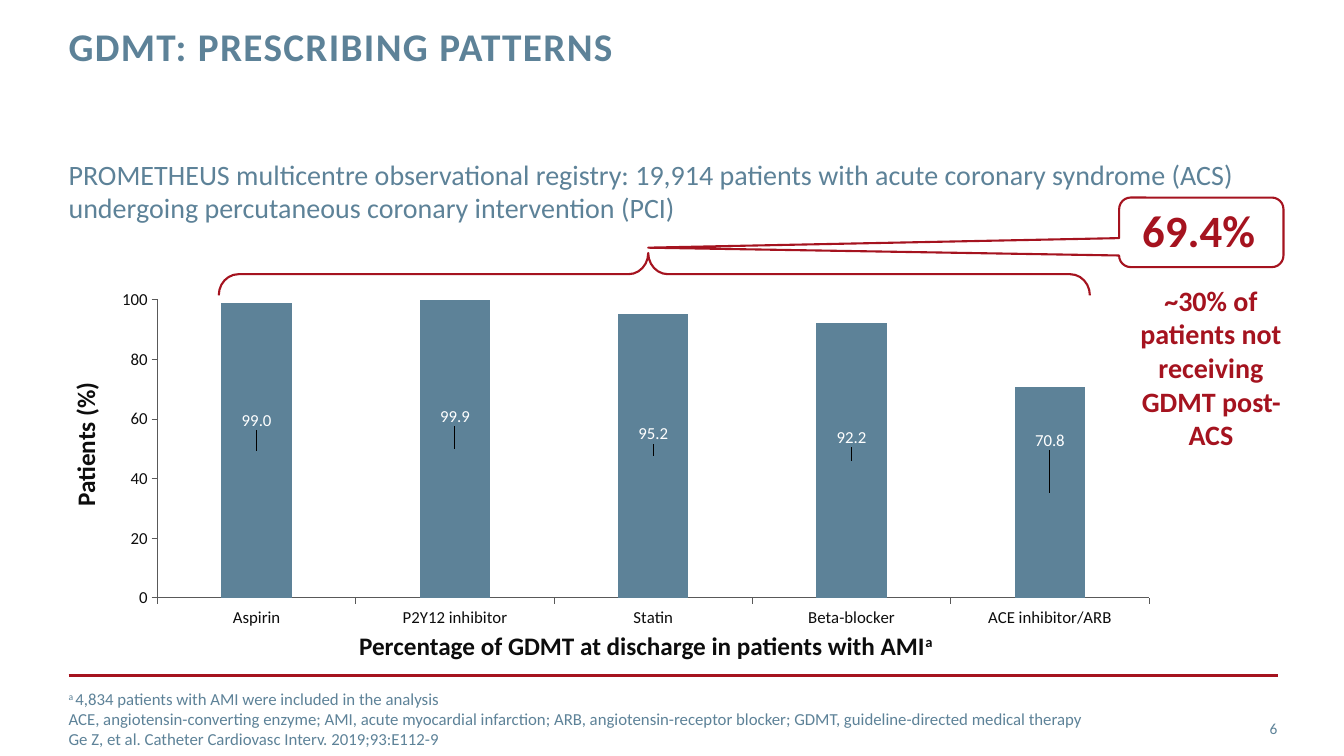
import pptx
import pptx.chart.data
import pptx.dml.color
import pptx.enum.chart
import pptx.enum.shapes
import pptx.enum.text
import pptx.oxml
import pptx.oxml.ns
import pptx.util
from pptx.util import Inches

BLUE = "5D8298"
RED = "A5131F"
INK = "0D0D0D"
FONT = "Calibri"
ALIGN = pptx.enum.text.PP_ALIGN
ANCHOR = pptx.enum.text.MSO_ANCHOR
SHAPE = pptx.enum.shapes.MSO_SHAPE
DRUGS = [
    ("Aspirin", 99.0, -0.085),
    ("P2Y12 inhibitor", 99.9, -0.093),
    ("Statin", 95.2, -0.062),
    ("Beta-blocker", 92.2, -0.066),
    ("ACE inhibitor/ARB", 70.8, -0.147),
]


def color(value):
    return pptx.dml.color.RGBColor.from_string(value)


def style_font(font, size, ink, bold=False):
    font.name = FONT
    font.size = pptx.util.Pt(size)
    font.bold = bold
    font.color.rgb = color(ink)


def add_text(slide, box, paragraphs, size=12, ink=BLUE, bold=False, align=ALIGN.LEFT,
             anchor=ANCHOR.TOP, inset=0, rotation=0, line_points=None, spacing=None):
    shape = slide.shapes.add_textbox(*map(Inches, box))
    shape.rotation = rotation
    frame = shape.text_frame
    frame.word_wrap = True
    frame.vertical_anchor = anchor
    frame.margin_left = frame.margin_right = Inches(inset)
    frame.margin_top = frame.margin_bottom = Inches(inset / 2)
    for index, runs in enumerate(paragraphs):
        paragraph = frame.paragraphs[0] if index == 0 else frame.add_paragraph()
        paragraph.alignment = align
        if line_points:
            paragraph.line_spacing = pptx.util.Pt(line_points)
        for text, raised in runs:
            run = paragraph.add_run()
            run.text = text
            style_font(run.font, size, ink, bold)
            properties = run._r.get_or_add_rPr()
            if raised:
                properties.set("baseline", "30000")
            if spacing:
                properties.set("spc", str(spacing * 100))
    return shape


def add_outline(slide, kind, box, adjustments, fill=None, rotation=0):
    shape = slide.shapes.add_shape(kind, *map(Inches, box))
    shape.shadow.inherit = False
    shape.rotation = rotation
    for index, value in enumerate(adjustments):
        shape.adjustments[index] = value
    if fill:
        shape.fill.solid()
        shape.fill.fore_color.rgb = color(fill)
    else:
        shape.fill.background()
    shape.line.color.rgb = color(RED)
    shape.line.width = pptx.util.Pt(1.5)


def chart_element(content):
    return pptx.oxml.parse_xml(content.replace(" ", f' {pptx.oxml.ns.nsdecls("c")} ', 1)
                               if content.startswith("<c:numFmt")
                               else content.replace(">", f' {pptx.oxml.ns.nsdecls("c")}>', 1))


def manual_layout(**values):
    items = "".join(f'<c:{name} val="{value}"/>' for name, value in values.items())
    return chart_element(f"<c:layout><c:manualLayout>{items}</c:manualLayout></c:layout>")


def style_axis(axis):
    axis.has_major_gridlines = False
    axis.major_tick_mark = pptx.enum.chart.XL_TICK_MARK.OUTSIDE
    axis.minor_tick_mark = pptx.enum.chart.XL_TICK_MARK.NONE
    axis.format.line.color.rgb = color("595959")
    axis.format.line.width = pptx.util.Pt(0.75)
    style_font(axis.tick_labels.font, 12, INK)


def add_labels(series):
    labels = series.data_labels
    labels.show_value = True
    labels.number_format = "0.0"
    labels.number_format_is_linked = False
    labels.position = pptx.enum.chart.XL_LABEL_POSITION.CENTER
    style_font(labels.font, 12, "FFFFFF")
    for index, (_, _, shift) in enumerate(DRUGS):
        label = series.points[index].data_label
        style_font(label.font, 12, "FFFFFF")
        label.position = pptx.enum.chart.XL_LABEL_POSITION.CENTER
        element = labels._element.findall(pptx.oxml.ns.qn("c:dLbl"))[index]
        element.insert(1, manual_layout(x=0, y=shift))
        element.insert(2, chart_element('<c:numFmt formatCode="0.0" sourceLinked="0"/>'))


def add_bar_chart(slide, box):
    data = pptx.chart.data.CategoryChartData(number_format="0.0")
    data.categories = [name for name, _, _ in DRUGS]
    data.add_series("Series 1", [value for _, value, _ in DRUGS])
    chart = slide.shapes.add_chart(pptx.enum.chart.XL_CHART_TYPE.COLUMN_CLUSTERED,
                                   *map(Inches, box), data).chart
    style_font(chart.font, 10, "000000")
    chart.has_legend = False
    chart.has_title = False
    style_axis(chart.category_axis)
    style_axis(chart.value_axis)
    chart.value_axis.minimum_scale = 0
    chart.value_axis.maximum_scale = 100
    chart.value_axis.major_unit = 20
    chart.value_axis.tick_labels.number_format = "0"
    chart.value_axis.tick_labels.number_format_is_linked = False
    plot = chart.plots[0]
    plot.gap_width = 182
    plot.vary_by_categories = False
    series = plot.series[0]
    series.format.fill.solid()
    series.format.fill.fore_color.rgb = color(BLUE)
    add_labels(series)
    area = chart._chartSpace.chart.plotArea
    for layout in area.findall(pptx.oxml.ns.qn("c:layout")):
        area.remove(layout)
    area.insert(0, manual_layout(layoutTarget="inner", xMode="edge", yMode="edge",
                                 x=0.053, y=0.05, w=0.927, h=0.845))


def add_header(slide, left, top):
    add_text(slide, (left, top, 9.56, 0.88), [[("GDMT: PRESCRIBING PATTERNS", False)]],
             size=28, bold=True, line_points=30, spacing=1)
    add_text(slide, (left, top + 1.29, 11.99, 0.75), [[(
        "PROMETHEUS multicentre observational registry: 19,914 patients with acute coronary "
        "syndrome (ACS) undergoing percutaneous coronary intervention (PCI)", False)]], size=20)


def add_chart_region(slide, left, top):
    heading = dict(size=18, ink=INK, bold=True, align=ALIGN.CENTER, inset=0.1)
    add_text(slide, (left + 0.42, top + 3.4, 9.97, 0.42),
             [[("Percentage of GDMT at discharge in patients with AMI", False), ("a", True)]],
             **heading)
    add_bar_chart(slide, (left, top, 10.61, 3.5))
    add_outline(slide, SHAPE.RIGHT_BRACE, (left + 5.28, top - 4.4, 0.42, 8.64),
                (0.465, 0.493), rotation=270)
    add_text(slide, (left - 1.35, top + 1.4, 2.41, 0.42), [[("Patients (%)", False)]],
             rotation=270, **heading)


def add_callout(slide, left, top):
    emphasis = dict(ink=RED, bold=True, inset=0.1)
    add_outline(slide, SHAPE.ROUNDED_RECTANGULAR_CALLOUT, (left, top, 1.63, 0.69),
                (-3.366, 0.221, 0.167), fill="FFFFFF")
    add_text(slide, (left + 0.13, top, 1.38, 0.64), [[("69.4%", False)]], size=32, **emphasis)
    add_text(slide, (left - 0.08, top + 0.8, 1.98, 1.78),
             [[("~30% of patients not receiving GDMT post-ACS", False)]],
             size=20, align=ALIGN.CENTER, **emphasis)


def add_footer(slide, left, top):
    rule = slide.shapes.add_connector(pptx.enum.shapes.MSO_CONNECTOR.STRAIGHT,
                                      Inches(left), Inches(top), Inches(left + 12), Inches(top))
    rule.line.color.rgb = color(RED)
    rule.line.width = pptx.util.Pt(2)
    rule._element.spPr.append(pptx.oxml.parse_xml(
        f'<a:effectLst {pptx.oxml.ns.nsdecls("a")}/>'))
    add_text(slide, (left, top + 0.23, 11.82, 0.4), [
        [("a ", True), ("4,834 patients with AMI were included in the analysis", False)],
        [("ACE, angiotensin-converting enzyme; AMI, acute myocardial infarction; ARB, "
          "angiotensin-receptor blocker; GDMT, guideline-directed medical therapy", False)],
        [("Ge Z, et al. Catheter Cardiovasc Interv. 2019;93:E112-9", False)],
    ], anchor=ANCHOR.MIDDLE)
    add_text(slide, (left + 11.13, top + 0.33, 0.86, 0.4), [[("6", False)]],
             size=11, align=ALIGN.RIGHT, anchor=ANCHOR.MIDDLE)


def main():
    presentation = pptx.Presentation()
    presentation.slide_width = Inches(13.33)
    presentation.slide_height = Inches(7.5)
    slide = presentation.slides.add_slide(presentation.slide_layouts[6])
    add_header(slide, 0.68, 0.27)
    add_chart_region(slide, 1, 2.8)
    add_callout(slide, 11.1, 1.96)
    add_footer(slide, 0.68, 6.7)
    presentation.save("out.pptx")


if __name__ == "__main__":
    main()
